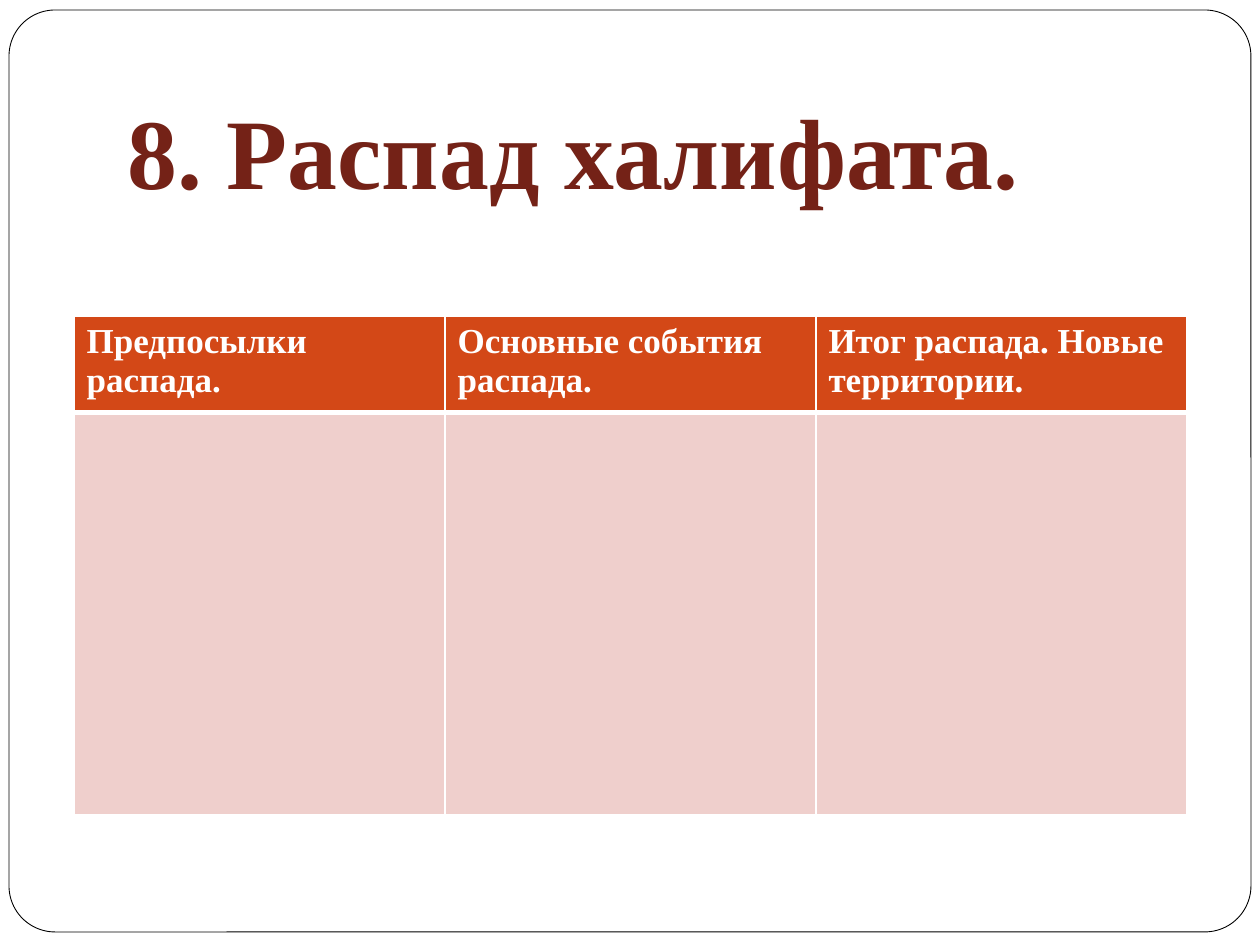
from lxml import etree
from pptx import Presentation, util as u
from pptx.dml.color import RGBColor
from pptx.enum import shapes, text
from pptx.oxml.ns import qn


def px(count):
    return u.Emu(round(count * 914400 / 126))


def color(value):
    return RGBColor.from_string(value)


deck = Presentation()
deck.slide_width, deck.slide_height = px(1260), px(945)
page = deck.slides.add_slide(deck.slide_layouts[6])

frame = page.shapes.add_shape(
    shapes.MSO_SHAPE.ROUNDED_RECTANGLE, px(9), px(10), px(1242), px(922))
frame.shadow.inherit = False
frame.adjustments[0] = 0.05
frame.fill.solid()
frame.fill.fore_color.rgb = color("FFFFFF")
frame.line.color.rgb = color("000000")
frame.line.width = u.Pt(0.5)

title = page.shapes.add_textbox(px(84), px(84), px(978), px(134))
title.text_frame.word_wrap = False
title.text_frame.auto_size = text.MSO_AUTO_SIZE.SHAPE_TO_FIT_TEXT
title.text_frame.text = "8. Распад халифата."
para = title.text_frame.paragraphs[0]
para.alignment = text.PP_ALIGN.CENTER
span = para.runs[0]
span.font.name = "Times New Roman"
span.font.size = u.Pt(57)
span.font.bold = True
span.font.color.rgb = color("742217")

headings = [
    "Предпосылки распада.",
    "Основные события распада.",
    "Итог распада. Новые территории.",
]
row_heights = [95, 402]
row_fills = ["D34817", "EFCFCC"]
row_borders = [
    {"lnL": 1, "lnR": 1, "lnT": 1, "lnB": 3},
    {"lnL": 1, "lnR": 1, "lnT": 3, "lnB": 1},
]
table = page.shapes.add_table(
    2, 3, px(74), px(316), px(1113), px(sum(row_heights))).table
for column in table.columns:
    column.width = px(371)

for row, height, fill, borders in zip(table.rows, row_heights, row_fills, row_borders):
    row.height = px(height)
    for cell in row.cells:
        properties = cell._tc.get_or_add_tcPr()
        for side, width in borders.items():
            line = etree.SubElement(properties, qn(f"a:{side}"), w=str(u.Pt(width)))
            solid = etree.SubElement(line, qn("a:solidFill"))
            etree.SubElement(solid, qn("a:srgbClr"), val="FFFFFF")
        cell.fill.solid()
        cell.fill.fore_color.rgb = color(fill)

for cell, heading in zip(table.rows[0].cells, headings):
    cell.text_frame.text = heading
    span = cell.text_frame.paragraphs[0].runs[0]
    span.font.name = "Times New Roman"
    span.font.size = u.Pt(20)
    span.font.bold = True
    span.font.color.rgb = color("FFFFFF")

deck.save("out.pptx")
